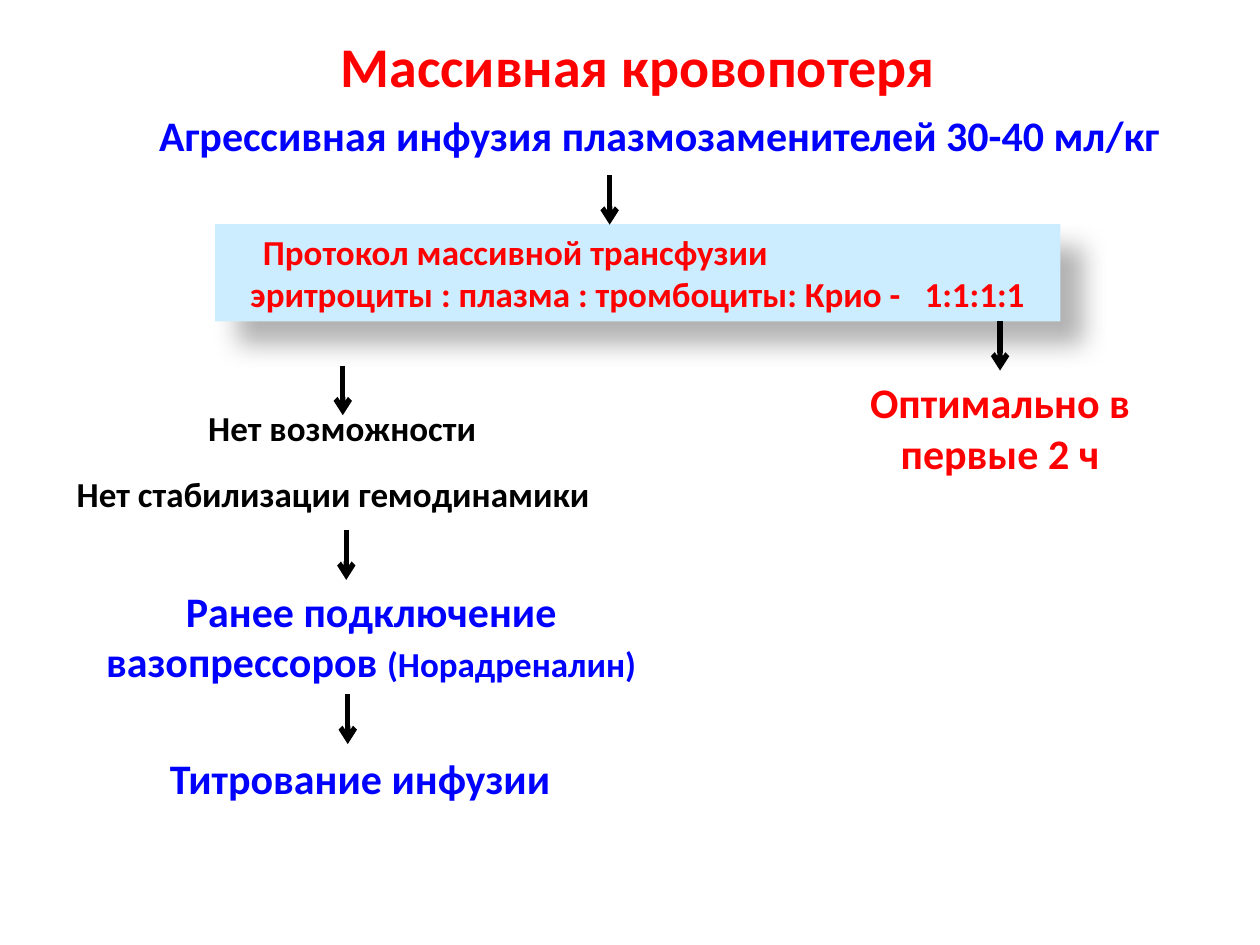
from dataclasses import dataclass

from lxml.etree import SubElement
from pptx import Presentation
from pptx.dml.color import RGBColor
from pptx.enum.shapes import MSO_CONNECTOR, MSO_SHAPE
from pptx.enum.text import MSO_ANCHOR, MSO_AUTO_SIZE, PP_ALIGN
from pptx.oxml.ns import qn
from pptx.util import Cm, Pt

COLORS = {"red": "FF0000", "blue": "0000FF", "black": "000000", "pale": "CCECFF"}
FONT = "Calibri"
ARROW_LENGTH = 1.0


@dataclass
class Label:
    left: float
    top: float
    width: float
    height: float
    runs: list[tuple[str, int]]
    color: str


@dataclass
class Arrow:
    x: float
    top: float


TITLE = Label(5.46, 0.51, 14.81, 1.63, [("Массивная кровопотеря", 32)], "red")
TIMING = Label(16.26, 7.47, 7.8, 2.31, [("Оптимально в первые 2 ч", 24)], "red")
STEPS = [
    Label(1.7, 2.08, 23.19, 1.27,
          [("Агрессивная инфузия плазмозаменителей 30-40 мл/кг", 24)], "blue"),
    Label(3.05, 8.08, 7.7, 1.12, [("Нет возможности", 20)], "black"),
    Label(0.23, 9.4, 12.98, 1.12, [("Нет стабилизации гемодинамики", 20)], "black"),
    Label(0.69, 11.68, 13.59, 2.31,
          [("Ранее подключение вазопрессоров ", 24), ("(Норадреналин)", 20)], "blue"),
    Label(2.26, 15.04, 10, 1.27, [("Титрование инфузии", 24)], "blue"),
]
ARROWS = [Arrow(12.29, 3.53), Arrow(6.91, 7.37), Arrow(6.98, 10.69), Arrow(7.01, 14)]
TIMING_ARROW = Arrow(20.16, 6.47)


def rgb(name: str) -> RGBColor:
    return RGBColor.from_string(COLORS[name])


def write(p, text: str, *, size: int, color: str, align=PP_ALIGN.CENTER) -> None:
    p.alignment = align
    r = p.add_run()
    r.text = text
    r.font.name = FONT
    r.font.size = Pt(size)
    r.font.bold = True
    r.font.color.rgb = rgb(color)


def fill_label(sp, label: Label) -> None:
    sp.left, sp.top = Cm(label.left), Cm(label.top)
    sp.width, sp.height = Cm(label.width), Cm(label.height)
    tf = sp.text_frame
    tf.word_wrap = True
    tf.auto_size = MSO_AUTO_SIZE.NONE
    tf.vertical_anchor = MSO_ANCHOR.TOP
    for text, size in label.runs:
        write(tf.paragraphs[0], text, size=size, color=label.color)


def add_label(s, label: Label):
    sp = s.shapes.add_textbox(0, 0, 0, 0)
    fill_label(sp, label)
    return sp


def add_arrow(s, arrow: Arrow):
    line = s.shapes.add_connector(
        MSO_CONNECTOR.STRAIGHT, Cm(arrow.x), Cm(arrow.top),
        Cm(arrow.x), Cm(arrow.top + ARROW_LENGTH))
    line.line.color.rgb = rgb("black")
    line.line.width = Pt(3)
    SubElement(line.line._get_or_add_ln(), qn("a:tailEnd"), type="arrow")
    SubElement(line._element.spPr, qn("a:effectLst"))
    return line


def add_shadow(sp) -> None:
    effects = sp._element.spPr.find(qn("a:effectLst"))
    shadow = SubElement(effects, qn("a:outerShdw"), blurRad=str(Pt(15)),
                        dist=str(Pt(18)), dir=str(45 * 60000), algn="tl",
                        rotWithShape="0")
    color = SubElement(shadow, qn("a:srgbClr"), val=COLORS["black"])
    SubElement(color, qn("a:alpha"), val="30000")


def add_protocol(s) -> None:
    sp = s.shapes.add_shape(MSO_SHAPE.RECTANGLE, Cm(4.34), Cm(4.52), Cm(17.04), Cm(1.96))
    sp.fill.solid()
    sp.fill.fore_color.rgb = rgb("pale")
    sp.line.fill.background()
    sp.shadow.inherit = False
    add_shadow(sp)
    tf = sp.text_frame
    tf.word_wrap = True
    tf.vertical_anchor = MSO_ANCHOR.MIDDLE
    tf.margin_left = Cm(0.71)
    heading, ratio = tf.paragraphs[0], tf.add_paragraph()
    write(heading, "Протокол массивной трансфузии", size=20, color="red",
          align=PP_ALIGN.LEFT)
    heading._p.get_or_add_pPr().set("indent", str(Cm(0.25)))
    write(ratio, "эритроциты : плазма : тромбоциты: Крио -\t1:1:1:1", size=20,
          color="red", align=PP_ALIGN.LEFT)
    tabs = SubElement(ratio._p.get_or_add_pPr(), qn("a:tabLst"))
    SubElement(tabs, qn("a:tab"), pos=str(Cm(13.59)), algn="l")


def main() -> None:
    prs = Presentation()
    prs.slide_width, prs.slide_height = Cm(25.4), Cm(19.05)
    s = prs.slides.add_slide(prs.slide_layouts[5])
    fill_label(s.shapes.title, TITLE)
    add_protocol(s)
    for step in STEPS:
        add_label(s, step)
    for arrow in ARROWS:
        add_arrow(s, arrow)
    timing = add_label(s, TIMING)
    add_arrow(s, TIMING_ARROW).end_connect(timing, 0)
    prs.save("out.pptx")


if __name__ == "__main__":
    main()
